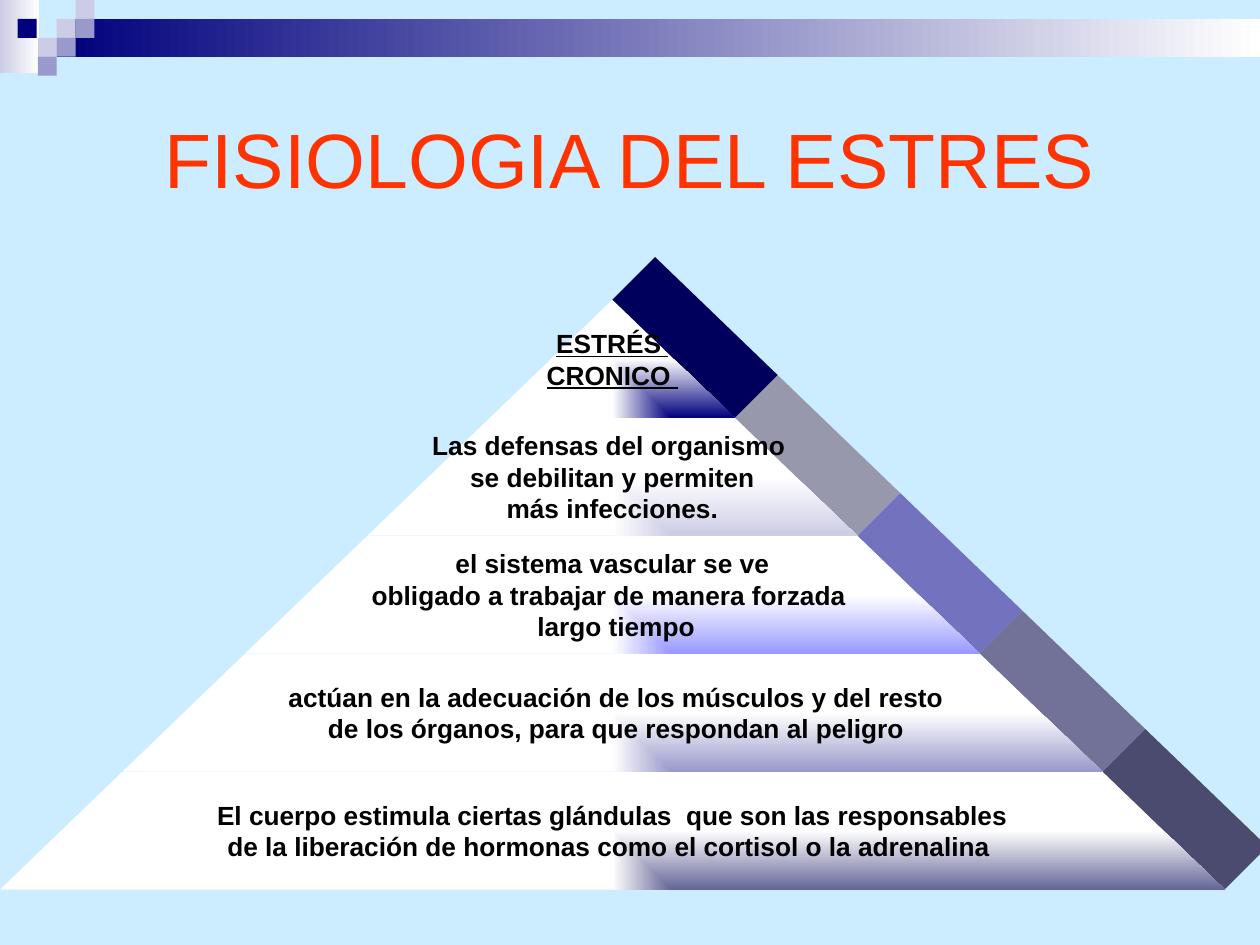
"""Build the stress physiology pyramid slide."""
import pptx
import pptx.dml.color
import pptx.enum.shapes
import pptx.enum.text
import pptx.util
from lxml import etree
from pptx.oxml.ns import qn

Inches = pptx.util.Inches
RGB = pptx.dml.color.RGBColor
SKY = RGB(0xCC, 0xEC, 0xFF)
WHITE = RGB(0xFF, 0xFF, 0xFF)
BLACK = RGB(0, 0, 0)
RED = RGB(0xFF, 0x33, 0x00)
NAVY = RGB(0, 0, 0x7D)
PALE = RGB(0xCC, 0xCC, 0xE6)
LILAC = RGB(0x99, 0x99, 0xCC)
VIOLET = RGB(0x99, 0x99, 0xFF)
SLATE = RGB(0x66, 0x66, 0x99)

MID, TOP = 4.86, 2.38
WIDE, TALL = MID / 5, 4.68 / 5
DEPTH = 0.34
CELL = 0.15

TIERS = [
    (NAVY, RGB(0, 0, 0x5C), ["ESTRÉS ", "CRONICO "]),
    (PALE, RGB(0x98, 0x98, 0xAC),
     ["Las defensas del organismo ", "se debilitan y permiten", "más infecciones."]),
    (VIOLET, RGB(0x72, 0x72, 0xBF),
     [" el sistema vascular se ve ", "obligado a trabajar de manera forzada ",
      " largo tiempo"]),
    (LILAC, RGB(0x72, 0x72, 0x98),
     [" actúan en la adecuación de los músculos y del resto",
      " de los órganos, para que respondan al peligro"]),
    (SLATE, RGB(0x4B, 0x4B, 0x70),
     ["El cuerpo estimula ciertas glándulas  que son las responsables",
      "de la liberación de hormonas como el cortisol o la adrenalina "]),
]
CELLS = [(0.45, 0.15, PALE), (0.6, 0, PALE), (0.6, 0.15, LILAC),
         (0.3, 0.3, PALE), (0.14, 0.15, NAVY), (0.45, 0.3, LILAC),
         (0.3, 0.45, LILAC)]


def write(para, text, size=15, color=BLACK, bold=False, under=False):
    """Add a centred, formatted run to a paragraph."""
    para.alignment = pptx.enum.text.PP_ALIGN.CENTER
    run = para.add_run()
    run.text = text
    font = run.font
    font.name, font.size = "Arial", pptx.util.Pt(size)
    font.bold, font.underline = bold, under
    font.color.rgb = color


class Deck:
    """Hold the style and the current slide."""

    def __init__(self):
        """Start a one-slide deck with a plain background."""
        self.prs = pptx.Presentation()
        self.prs.slide_width, self.prs.slide_height = Inches(10), Inches(7.5)
        self.slide = self.prs.slides.add_slide(self.prs.slide_layouts[5])
        self.slide.background.fill.solid()
        self.slide.background.fill.fore_color.rgb = SKY

    def paint(self, shape, color, fade=False, corner=False):
        """Fill a shape plainly, or fade to white across or from a corner."""
        shape.shadow.inherit = False
        shape.line.fill.background()
        fill = shape.fill
        if not fade:
            fill.solid()
            fill.fore_color.rgb = color
            return
        fill.gradient()
        fill.gradient_angle = 0
        for stop, tint, place in zip(fill.gradient_stops, (color, WHITE), (0, 1)):
            stop.color.rgb, stop.position = tint, place
        if corner:
            lin = shape.element.spPr.find(".//" + qn("a:lin"))
            path = etree.Element(qn("a:path"), {"path": "rect"})
            etree.SubElement(path, qn("a:fillToRect"), {"l": "100000", "t": "100000"})
            lin.getparent().replace(lin, path)

    def title(self, text):
        """Place the slide title."""
        box = self.slide.shapes.title
        box.left, box.top = Inches(0.5), Inches(0.5)
        box.width, box.height = Inches(9), Inches(1.5)
        box.text_frame.vertical_anchor = pptx.enum.text.MSO_ANCHOR.MIDDLE
        write(box.text_frame.paragraphs[0], text, size=44, color=RED)

    def rect(self, left, top, width, height, color, fade=False):
        """Draw a rectangle."""
        kind = pptx.enum.shapes.MSO_SHAPE.RECTANGLE
        sizes = [Inches(n) for n in (left, top, width, height)]
        self.paint(self.slide.shapes.add_shape(kind, *sizes), color, fade)

    def poly(self, points, color, fade=False):
        """Draw a closed outline and return it."""
        first, *rest = [(Inches(x), Inches(y)) for x, y in points]
        pen = self.slide.shapes.build_freeform(*first)
        pen.add_line_segments(rest, close=True)
        shape = pen.convert_to_shape()
        self.paint(shape, color, fade, corner=fade)
        return shape

    def side(self, row, color):
        """Draw the receding right side of a tier."""
        x, y = MID + WIDE * row, TOP + TALL * row
        self.poly([(x, y), (x + DEPTH, y - DEPTH),
                   (x + WIDE + DEPTH, y + TALL - DEPTH), (x + WIDE, y + TALL)], color)

    def tier(self, row, color, lines):
        """Draw the front of a tier with its text."""
        y, near, far = TOP + TALL * row, WIDE * row, WIDE * (row + 1)
        shape = self.poly([(MID - far, y + TALL), (MID - near, y),
                           (MID + near, y), (MID + far, y + TALL)], color, fade=True)
        frame = shape.text_frame
        frame.word_wrap = False
        frame.vertical_anchor = pptx.enum.text.MSO_ANCHOR.MIDDLE
        frame.margin_left = frame.margin_right = 0
        frame.margin_top = frame.margin_bottom = 0
        for i, line in enumerate(lines):
            para = frame.add_paragraph() if i else frame.paragraphs[0]
            write(para, line, bold=True, under=row == 0)


def main():
    """Compose and save the slide."""
    deck = Deck()
    deck.rect(0, 0, 0.31, 0.58, PALE, fade=True)
    deck.rect(0.45, 0.15, 9.55, 0.3, NAVY, fade=True)
    for left, top, color in CELLS:
        deck.rect(left, top, CELL, CELL, color)
    deck.title("FISIOLOGIA DEL ESTRES")
    for row, (front, shade, lines) in reversed(list(enumerate(TIERS))):
        deck.side(row, shade)
        deck.tier(row, front, lines)
    deck.prs.save("out.pptx")


if __name__ == "__main__":
    main()
